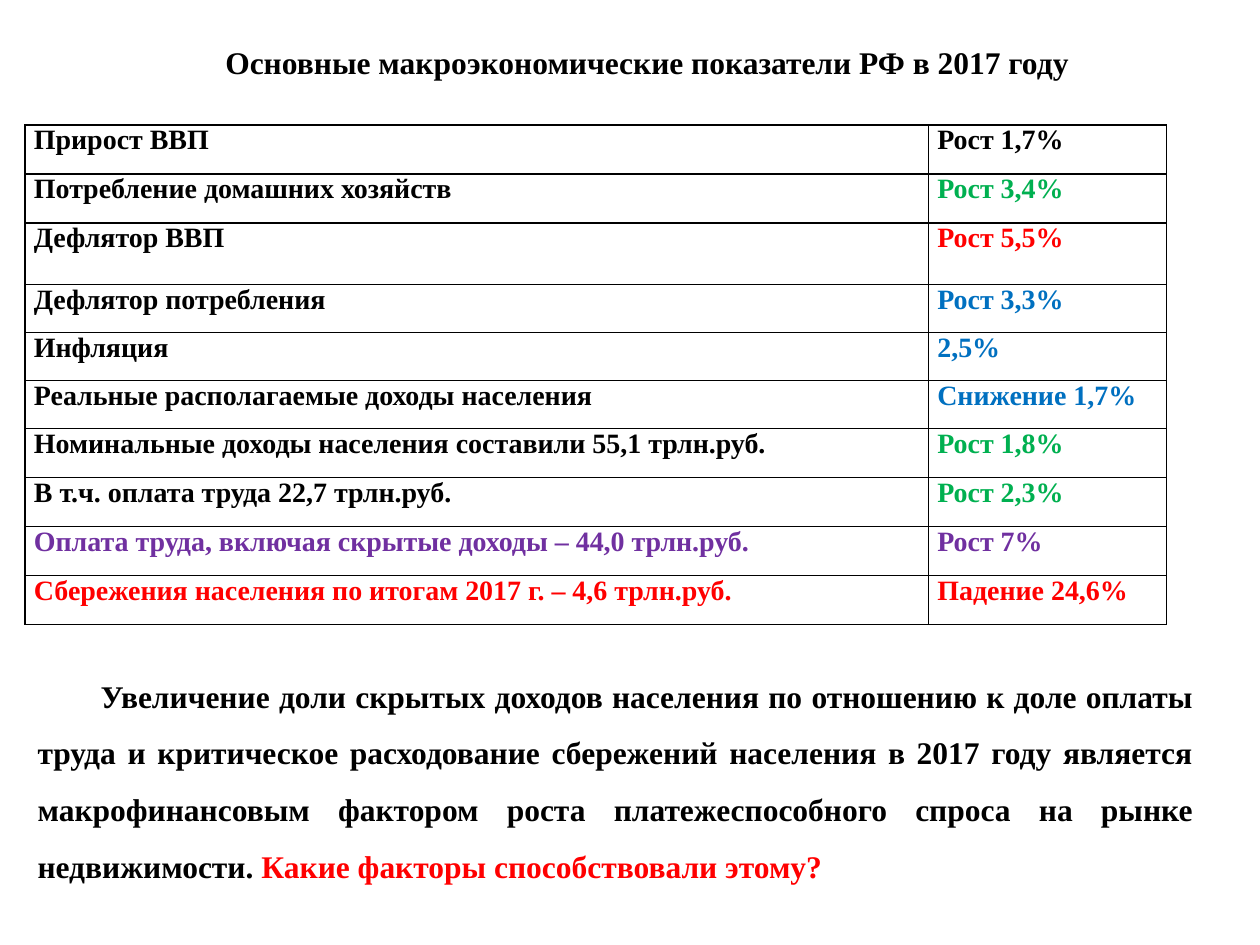
"""Builds a slide of Russian macroeconomic indicators for 2017."""
from lxml import etree
from pptx import Presentation
from pptx.dml.color import RGBColor
from pptx.enum import text
from pptx.oxml import ns
from pptx.util import Inches, Pt

COLORS = {
    "black": "000000",
    "white": "FFFFFF",
    "green": "00B050",
    "red": "FF0000",
    "blue": "0070C0",
    "purple": "7030A0",
}
FONT = {"name": "Times New Roman", "bold": True}
CELL_FORMAT = {
    "margin_left": Inches(0.07),
    "margin_right": Inches(0.07),
    "margin_top": 0,
    "margin_bottom": 0,
    "vertical_anchor": text.MSO_ANCHOR.TOP,
}
COLUMN_WIDTHS = [7.17, 1.89]
ROW_HEIGHTS = [0.39, 0.39, 0.49, 0.38, 0.38, 0.38, 0.39, 0.39, 0.39, 0.39]
INDICATORS = [
    ("Прирост ВВП", "black", "Рост 1,7%", "black"),
    ("Потребление домашних хозяйств", "black", "Рост 3,4%", "green"),
    ("Дефлятор ВВП", "black", "Рост 5,5%", "red"),
    ("Дефлятор потребления", "black", "Рост 3,3%", "blue"),
    ("Инфляция", "black", "2,5%", "blue"),
    ("Реальные располагаемые доходы населения", "black", "Снижение 1,7%", "blue"),
    ("Номинальные доходы населения составили 55,1 трлн.руб.", "black",
     "Рост 1,8%", "green"),
    ("В т.ч. оплата труда 22,7 трлн.руб.", "black", "Рост 2,3%", "green"),
    ("Оплата труда, включая скрытые доходы – 44,0 трлн.руб.", "purple",
     "Рост 7%", "purple"),
    ("Сбережения населения по итогам 2017 г. – 4,6 трлн.руб.", "red",
     "Падение 24,6%", "red"),
]
TITLE = "Основные макроэкономические показатели РФ в 2017 году"
CONCLUSION = (
    "Увеличение доли скрытых доходов населения по отношению к доле оплаты труда "
    "и критическое расходование сбережений населения в 2017 году является "
    "макрофинансовым фактором роста платежеспособного спроса на рынке недвижимости. "
)
QUESTION = "Какие факторы способствовали этому?"


def apply_format(target, values):
    for name, value in values.items():
        setattr(target, name, value)


def add_run(paragraph, wording, color, size):
    run = paragraph.add_run()
    run.text = wording
    apply_format(run.font, {**FONT, "size": Pt(size)})
    run.font.color.rgb = RGBColor.from_string(COLORS[color])


def add_text(slide, box, runs, wrap):
    frame = slide.shapes.add_textbox(*map(Inches, box)).text_frame
    frame.word_wrap = wrap
    frame.auto_size = text.MSO_AUTO_SIZE.SHAPE_TO_FIT_TEXT
    paragraph = frame.paragraphs[0]
    for wording, color in runs:
        add_run(paragraph, wording, color, 18)
    return paragraph


def add_borders(cell):
    properties = cell._tc.get_or_add_tcPr()
    for position, side in enumerate(("lnL", "lnR", "lnT", "lnB")):
        line = etree.Element(ns.qn(f"a:{side}"), w=str(Pt(1)))
        fill = etree.SubElement(line, ns.qn("a:solidFill"))
        etree.SubElement(fill, ns.qn("a:srgbClr"), val=COLORS["black"])
        properties.insert(position, line)


def fill_cell(cell, wording, color):
    apply_format(cell, CELL_FORMAT)
    cell.fill.solid()
    cell.fill.fore_color.rgb = RGBColor.from_string(COLORS["white"])
    add_run(cell.text_frame.paragraphs[0], wording, color, 16)
    add_borders(cell)


def add_indicators(slide):
    box = (0.2, 0.99, sum(COLUMN_WIDTHS), sum(ROW_HEIGHTS))
    table = slide.shapes.add_table(
        len(ROW_HEIGHTS), len(COLUMN_WIDTHS), *map(Inches, box)).table
    apply_format(table, {"first_row": False, "horz_banding": False})
    for column, width in zip(table.columns, COLUMN_WIDTHS):
        column.width = Inches(width)
    for row, height, indicator in zip(table.rows, ROW_HEIGHTS, INDICATORS):
        row.height = Inches(height)
        name, name_color, change, change_color = indicator
        fill_cell(row.cells[0], name, name_color)
        fill_cell(row.cells[1], change, change_color)


def add_conclusion(slide):
    paragraph = add_text(slide, (0.2, 5.17, 9.37, 1.92),
                         [(CONCLUSION, "black"), (QUESTION, "red")], True)
    apply_format(paragraph, {"alignment": text.PP_ALIGN.JUSTIFY, "line_spacing": 1.5})
    paragraph._p.get_or_add_pPr().set("indent", str(Inches(0.5)))


def main():
    presentation = Presentation()
    apply_format(presentation, {"slide_width": Inches(10), "slide_height": Inches(7.5)})
    slide = presentation.slides.add_slide(presentation.slide_layouts[6])
    add_conclusion(slide)
    add_indicators(slide)
    add_text(slide, (1.69, 0.29, 6.97, 0.4), [(TITLE, "black")], False)
    presentation.save("out.pptx")


if __name__ == "__main__":
    main()
